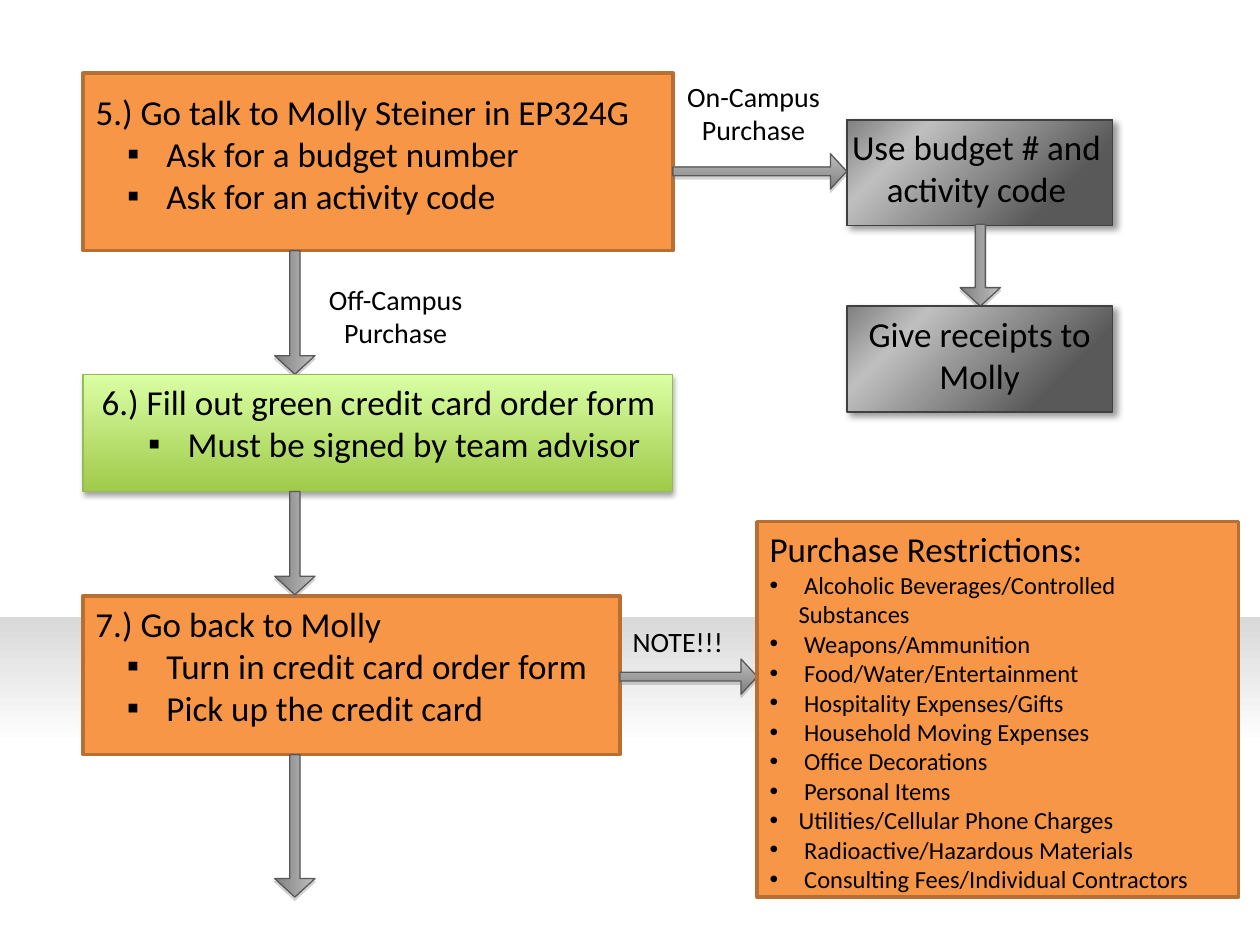
from lxml import etree
from pptx import Presentation
from pptx import util as u
from pptx.dml.color import RGBColor
from pptx.enum import shapes, text
from pptx.oxml import ns

BLACK = RGBColor(0x00, 0x00, 0x00)
WHITE = RGBColor(0xFF, 0xFF, 0xFF)
FLOOR_GRAY = RGBColor(0xD9, 0xD9, 0xD9)
ORANGE = RGBColor(0xF7, 0x96, 0x46)
ORANGE_EDGE = RGBColor(0xB7, 0x6F, 0x34)
GREEN = RGBColor(0xA0, 0xCA, 0x4A)
GREEN_LIGHT = RGBColor(0xDA, 0xFF, 0xA5)
GREEN_EDGE = RGBColor(0x98, 0xB9, 0x55)
GRAY_DARK = RGBColor(0x59, 0x59, 0x59)
GRAY_LIGHT = RGBColor(0xBF, 0xBF, 0xBF)
GRAY_MID = RGBColor(0x80, 0x80, 0x80)
GRAY_EDGE = RGBColor(0x40, 0x40, 0x40)
ARROW_END = RGBColor(0x7F, 0x7F, 0x7F)

# Gradients: stops as (percent, colour), then clockwise angle
FLOOR_FILL = ([(0, WHITE), (61, WHITE), (100, FLOOR_GRAY)], 270)
GREEN_FILL = ([(0, GREEN), (100, GREEN_LIGHT)], 270)
METAL_FILL = ([(22, GRAY_DARK), (77, GRAY_LIGHT), (100, GRAY_MID)], 225)
ARROW_FILL = ([(0, GRAY_LIGHT), (100, ARROW_END)], 90)

# Shadows: colour, opacity percent, blur, distance, angle
GREEN_SHADOW = (BLACK, 35, 3.1, 1.8, 90)
METAL_SHADOW = (BLACK, 40, 4, 3, 45)
ARROW_SHADOW = (GRAY_MID, 35, 0, 1.8, 90)

# Bullets: character, left margin, hang
STEP_BULLET = ("▪", 0.5, 0.25)
LIST_BULLET = ("•", 0.23, 0.23)

CENTER = text.PP_ALIGN.CENTER
LEFT = text.PP_ALIGN.LEFT


def add_node(parent, tag, **attributes):
    node = etree.SubElement(parent, ns.qn(tag))
    for name, value in attributes.items():
        node.set(name, str(value))
    return node


class Flowchart:
    font = "Calibri"
    size = 20

    def __init__(self, page):
        self.page = page

    def _gradient(self, shape, stops, angle):
        shape.fill.gradient()
        shape.fill.gradient_angle = (360 - angle) % 360
        stop_list = shape._element.spPr.find(".//" + ns.qn("a:gsLst"))
        for old in list(stop_list):
            stop_list.remove(old)
        for percent, color in stops:
            stop = add_node(stop_list, "a:gs", pos=percent * 1000)
            add_node(stop, "a:srgbClr", val=color)

    def _shadow(self, shape, color, opacity, blur, distance, angle):
        effects = shape._element.spPr.find(ns.qn("a:effectLst"))
        outer = add_node(effects, "a:outerShdw", blurRad=int(u.Pt(blur)),
                         dist=int(u.Pt(distance)), dir=angle * 60000,
                         rotWithShape=0)
        tint = add_node(outer, "a:srgbClr", val=color)
        add_node(tint, "a:alpha", val=opacity * 1000)

    def shape(self, kind, left, top, width, height, fill, line=None, shadow=None):
        """Add a preset shape; fill is a colour or a gradient, line is (colour, points)."""
        shape = self.page.shapes.add_shape(
            kind, u.Inches(left), u.Inches(top), u.Inches(width), u.Inches(height))
        if isinstance(fill, RGBColor):
            shape.fill.solid()
            shape.fill.fore_color.rgb = fill
        else:
            self._gradient(shape, *fill)
        if line:
            shape.line.color.rgb = line[0]
            shape.line.width = u.Pt(line[1])
        else:
            shape.line.fill.background()
        shape.shadow.inherit = False
        if shadow:
            self._shadow(shape, *shadow)
        return shape

    def box(self, left, top, width, height, fill, line, shadow=None):
        return self.shape(shapes.MSO_SHAPE.RECTANGLE, left, top, width, height,
                          fill, line, shadow)

    def orange_box(self, *place):
        return self.box(*place, ORANGE, (ORANGE_EDGE, 2))

    def metal_box(self, *place):
        return self.box(*place, METAL_FILL, (GRAY_EDGE, 1), METAL_SHADOW)

    def arrow(self, x, y, length, thickness, down=False):
        """Add a block arrow whose tail is centred on (x, y)."""
        center_x, center_y = (x, y + length / 2) if down else (x + length / 2, y)
        arrow = self.shape(
            shapes.MSO_SHAPE.RIGHT_ARROW, center_x - length / 2,
            center_y - thickness / 2, length, thickness,
            ARROW_FILL, (GRAY_DARK, 0.75), ARROW_SHADOW)
        arrow.adjustments[0] = 0.25
        arrow.adjustments[1] = 0.46
        arrow.rotation = 90 if down else 0

    def text(self, left, top, width, height, heading, items=(), align=LEFT,
             size=None, item_size=None, bullet=STEP_BULLET):
        box = self.page.shapes.add_textbox(
            u.Inches(left), u.Inches(top), u.Inches(width), u.Inches(height))
        frame = box.text_frame
        frame.word_wrap = True
        frame.auto_size = text.MSO_AUTO_SIZE.SHAPE_TO_FIT_TEXT
        size = size or self.size
        self._write(frame.paragraphs[0], heading, size, align)
        for item in items:
            para = frame.add_paragraph()
            self._write(para, item, item_size or size, align)
            self._bullet(para, *bullet)

    def _write(self, para, words, size, align):
        para.alignment = align
        span = para.add_run()
        span.text = words
        span.font.name = self.font
        span.font.size = u.Pt(size)
        span.font.color.rgb = BLACK

    def _bullet(self, para, character, margin, hang):
        if character == STEP_BULLET[0]:
            para.level = 1
        properties = para._p.get_or_add_pPr()
        properties.set("marL", str(int(u.Inches(margin))))
        properties.set("indent", str(-int(u.Inches(hang))))
        add_node(properties, "a:buFont", typeface="Arial")
        add_node(properties, "a:buChar", char=character)

    def label(self, left, top, height, words):
        self.text(left, top, 1.28, height, words, align=CENTER, size=16)


def main():
    deck = Presentation()
    deck.slide_width, deck.slide_height = u.Inches(10), u.Inches(7.5)
    chart = Flowchart(deck.slides.add_slide(deck.slide_layouts[6]))

    chart.shape(shapes.MSO_SHAPE.RECTANGLE, 0, 4.9, 10, 2.6, FLOOR_FILL)

    # Step 5 and the on-campus branch
    chart.orange_box(0.66, 0.58, 4.68, 1.41)
    chart.text(0.66, 0.67, 5.35, 1.11, "5.) Go talk to Molly Steiner in EP324G",
               [" Ask for a budget number", " Ask for an activity code"])
    chart.metal_box(6.72, 0.95, 2.11, 0.84)
    chart.text(6.34, 0.95, 2.82, 0.77, "Use budget # and activity code", align=CENTER)
    chart.arrow(5.34, 1.36, 1.38, 0.28)
    chart.label(5.34, 0.58, 0.64, "On-Campus Purchase")
    chart.label(2.5, 2.19, 0.64, "Off-Campus Purchase")
    chart.arrow(2.34, 1.99, 0.98, 0.32, down=True)
    chart.arrow(7.78, 1.78, 0.65, 0.32, down=True)
    chart.metal_box(6.72, 2.43, 2.11, 0.84)
    chart.text(6.72, 2.43, 2.11, 0.77, "Give receipts to Molly", align=CENTER)

    # Step 6
    chart.box(0.66, 2.97, 4.68, 0.93, GREEN_FILL, (GREEN_EDGE, 0.75), GREEN_SHADOW)
    chart.text(0.33, 2.97, 5.35, 0.77, "6.) Fill out green credit card order form",
               [" Must be signed by team advisor"], align=CENTER)

    # Step 7 and the restrictions note
    chart.orange_box(0.66, 4.73, 4.26, 1.26)
    chart.arrow(2.34, 3.9, 0.82, 0.32, down=True)
    chart.text(0.66, 4.73, 4.26, 1.11, "7.) Go back to Molly",
               [" Turn in credit card order form", " Pick up the credit card"])
    chart.arrow(2.34, 5.99, 1.13, 0.32, down=True)
    chart.arrow(4.92, 5.37, 1.09, 0.28)
    chart.label(4.74, 4.91, 0.37, "NOTE!!!")
    chart.orange_box(6.01, 4.14, 3.82, 2.98)
    chart.text(6.01, 4.14, 3.82, 2.79, "Purchase Restrictions:", [
        " Alcoholic Beverages/Controlled Substances",
        " Weapons/Ammunition",
        " Food/Water/Entertainment",
        " Hospitality Expenses/Gifts",
        " Household Moving Expenses",
        " Office Decorations",
        " Personal Items",
        "Utilities/Cellular Phone Charges",
        " Radioactive/Hazardous Materials",
        " Consulting Fees/Individual Contractors",
    ], item_size=14, bullet=LIST_BULLET)

    deck.save("out.pptx")


if __name__ == "__main__":
    main()
